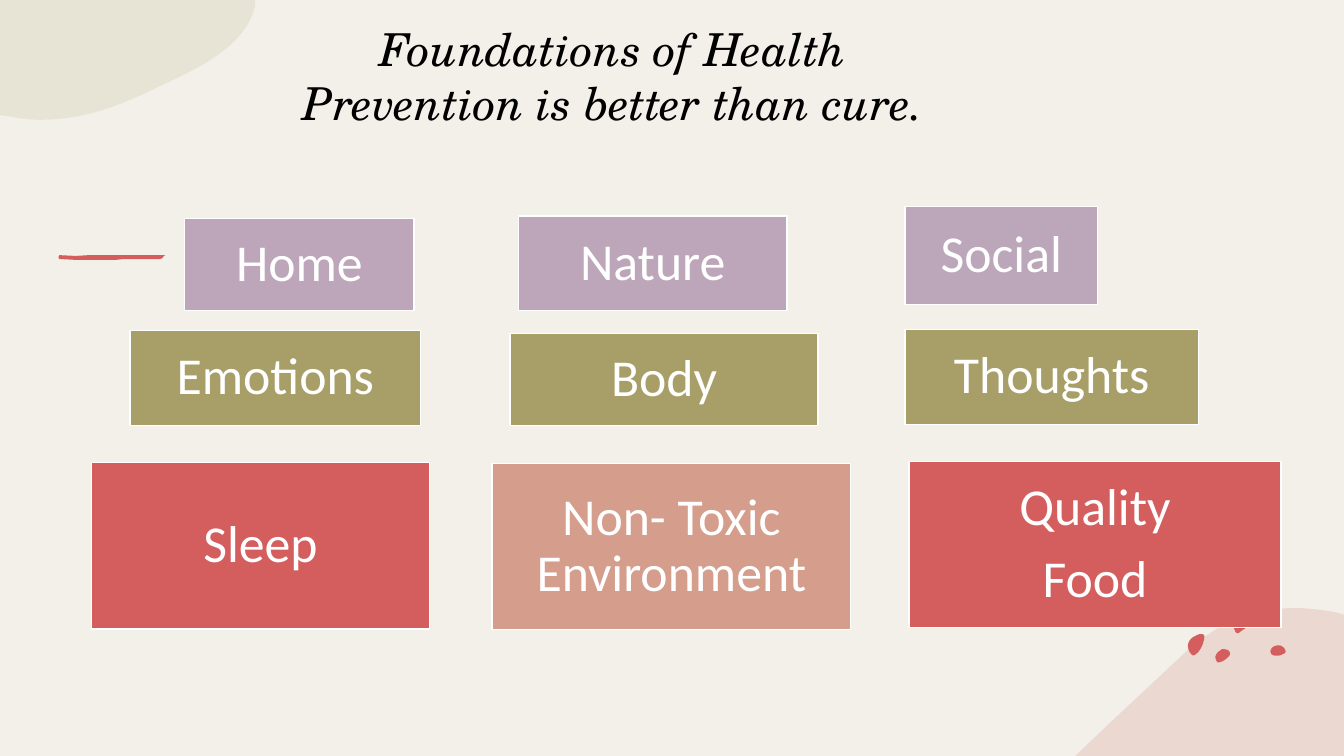
from dataclasses import dataclass

from lxml.etree import SubElement
from pptx import Presentation
from pptx.dml.color import RGBColor
from pptx.enum.shapes import MSO_SHAPE
from pptx.enum.text import MSO_ANCHOR, PP_ALIGN
from pptx.oxml.ns import qn
from pptx.shapes.autoshape import Shape
from pptx.slide import Slide
from pptx.text.text import TextFrame
from pptx.util import Cm, Pt

CREAM = RGBColor(0xF3, 0xF0, 0xE9)
SAND = RGBColor(0xDC, 0xD9, 0xC3)
BLUSH = RGBColor(0xE5, 0xC4, 0xBA)
CORAL = RGBColor(0xD4, 0x5E, 0x5E)
SALMON = RGBColor(0xD4, 0x9D, 0x8C)
OLIVE = RGBColor(0xA8, 0x9F, 0x68)
MAUVE = RGBColor(0xBD, 0xA6, 0xB9)
SOFT_MAUVE = RGBColor(0xBC, 0xA6, 0xB9)
WHITE = RGBColor(0xFF, 0xFF, 0xFF)
BLACK = RGBColor(0x00, 0x00, 0x00)

TITLE_FONT = {"name": "TeX Gyre Schola", "size": Pt(32.4), "italic": True}
BOX_FONT = {"name": "Calibri", "size": Pt(37)}
TITLE_PARA = {"alignment": PP_ALIGN.CENTER}
BOX_PARA = {"alignment": PP_ALIGN.CENTER, "line_spacing": 0.9, "space_after": Pt(12)}
BOX_FRAME = {"word_wrap": True, "vertical_anchor": MSO_ANCHOR.MIDDLE} | {
    f"margin_{side}": Cm(0.38) for side in ("left", "top", "right", "bottom")
}
CURVE_STEPS = 12

Point = tuple[float, float]


@dataclass(frozen=True)
class Outline:
    """Closed outline in cm: a step of two numbers is a line, of six a Bézier curve."""

    start: Point
    steps: tuple[tuple[float, ...], ...]
    colour: RGBColor = CORAL
    opacity: int = 100


@dataclass(frozen=True)
class Box:
    text: str
    left: float
    top: float
    width: float
    height: float
    colour: RGBColor


OUTLINES = (
    # Corner blobs
    Outline((32.72, 15.32), (
        (33.05, 15.34, 33.38, 15.37, 33.71, 15.44), (33.87, 15.49),
        (33.87, 19.05), (27.1, 19.05), (27.13, 19.02),
        (27.99, 18.19, 28.88, 17.37, 29.69, 16.61),
        (30.25, 16.05, 30.8, 15.72, 31.42, 15.52),
        (31.85, 15.37, 32.28, 15.32, 32.72, 15.32),
    ), BLUSH, 50),
    Outline((0, 0), (
        (6.43, 0), (6.43, 0.15),
        (6.22, 1.12, 5.08, 1.7, 4.01, 2.18),
        (3.12, 2.62, 2.18, 3.02, 1.04, 3.02),
        (0.79, 3.02, 0.56, 3, 0.33, 2.95), (0, 2.9),
    ), SAND, 50),
    # Petals
    Outline((30.81, 16.36), (
        (30.86, 16.36, 30.89, 16.36, 30.94, 16.38),
        (30.99, 16.41, 31.01, 16.46, 30.99, 16.51),
        (30.94, 16.59, 30.78, 16.71, 30.68, 16.69),
        (30.66, 16.66, 30.63, 16.61, 30.63, 16.56),
        (30.63, 16.51, 30.68, 16.43, 30.73, 16.41),
        (30.76, 16.38, 30.78, 16.36, 30.81, 16.36),
    )),
    Outline((30.25, 15.98), (
        (30.3, 15.98, 30.35, 15.98, 30.35, 16.03), (30.35, 16.08),
        (30.33, 16.21, 30.28, 16.33, 30.2, 16.43),
        (30.15, 16.48, 30.07, 16.56, 30.02, 16.48),
        (29.95, 16.41, 29.92, 16.28, 29.95, 16.21),
        (29.97, 16.13, 30.02, 16.1, 30.07, 16.05),
        (30.1, 16.05, 30.18, 15.98, 30.25, 15.98),
    )),
    Outline((32.23, 16.26), (
        (32.28, 16.26, 32.36, 16.31, 32.38, 16.36),
        (32.41, 16.41, 32.41, 16.46, 32.33, 16.48),
        (32.26, 16.54, 32.05, 16.54, 32.03, 16.46),
        (32, 16.41, 32.03, 16.36, 32.05, 16.33),
        (32.1, 16.28, 32.16, 16.26, 32.23, 16.26),
    )),
    Outline((31.19, 15.57), (
        (31.34, 15.57, 31.62, 15.57, 31.52, 15.72),
        (31.52, 15.75, 31.5, 15.77, 31.47, 15.77), (31.24, 15.93),
        (31.22, 15.95, 31.19, 15.98, 31.14, 15.93),
        (31.09, 15.82, 31.06, 15.75, 31.06, 15.65), (31.09, 15.57),
    )),
    # Brush stroke
    Outline((1.5, 6.43), (
        (1.91, 6.45), (2.24, 6.43), (4.17, 6.43),
        (4.09, 6.45, 4.14, 6.53, 3.99, 6.53),
        (3.1, 6.53), (2.92, 6.55), (1.91, 6.55), (1.55, 6.53),
        (1.45, 6.55, 1.47, 6.45, 1.5, 6.43),
    )),
)

BOXES = (
    Box("Home", 4.65, 5.51, 5.79, 2.31, MAUVE),
    Box("Emotions", 3.28, 8.33, 7.32, 2.39, OLIVE),
    Box("Nature", 13.06, 5.44, 6.78, 2.39, MAUVE),
    Box("Quality\nFood", 22.91, 11.63, 9.37, 4.19, CORAL),
    Box("Social", 22.81, 5.21, 4.85, 2.46, SOFT_MAUVE),
    Box("Non- Toxic Environment", 12.4, 11.68, 9.04, 4.19, SALMON),
    Box("Body", 12.85, 8.41, 7.77, 2.31, OLIVE),
    Box("Sleep", 2.31, 11.66, 8.51, 4.19, CORAL),
    Box("Thoughts", 22.81, 8.31, 7.39, 2.39, OLIVE),
)


def apply_format(target: object, values: dict) -> None:
    for name, value in values.items():
        setattr(target, name, value)


def curve_points(start: Point, step: tuple[float, ...]) -> list[Point]:
    """Points along one cubic Bézier curve, without its start."""
    corners = (start, step[0:2], step[2:4], step[4:6])
    points = []
    for index in range(1, CURVE_STEPS + 1):
        t = index / CURVE_STEPS
        weights = ((1 - t) ** 3, 3 * t * (1 - t) ** 2, 3 * t**2 * (1 - t), t**3)
        x, y = (sum(w * c[axis] for w, c in zip(weights, corners)) for axis in (0, 1))
        points.append((x, y))
    return points


def paint(shape: Shape, colour: RGBColor) -> None:
    shape.shadow.inherit = False
    shape.fill.solid()
    shape.fill.fore_color.rgb = colour


def draw_outline(page: Slide, outline: Outline) -> None:
    points = [outline.start]
    for step in outline.steps:
        points += [step] if len(step) == 2 else curve_points(points[-1], step)
    first, *others = [(Cm(x), Cm(y)) for x, y in points]
    builder = page.shapes.build_freeform(*first)
    builder.add_line_segments(others, close=True)
    shape = builder.convert_to_shape()
    paint(shape, outline.colour)
    shape.line.fill.background()
    if outline.opacity < 100:
        colour = shape.fill._xPr.find(qn("a:solidFill"))[0]
        SubElement(colour, qn("a:alpha"), val=str(outline.opacity * 1000))


def write_text(frame: TextFrame, text: str, para_format: dict, font: dict, colour: RGBColor) -> None:
    frame.text = text
    for para in frame.paragraphs:
        apply_format(para, para_format)
        for span in para.runs:
            apply_format(span.font, font)
            span.font.color.rgb = colour


def draw_box(page: Slide, box: Box) -> None:
    bounds = map(Cm, (box.left, box.top, box.width, box.height))
    shape = page.shapes.add_shape(MSO_SHAPE.RECTANGLE, *bounds)
    paint(shape, box.colour)
    shape.line.color.rgb = WHITE
    shape.line.width = Pt(1)
    apply_format(shape.text_frame, BOX_FRAME)
    write_text(shape.text_frame, box.text, BOX_PARA, BOX_FONT, WHITE)


def draw_title(page: Slide) -> None:
    frame = page.shapes.add_textbox(Cm(1.45), Cm(0.71), Cm(27.99), Cm(2.69)).text_frame
    apply_format(frame, {"word_wrap": True, "vertical_anchor": MSO_ANCHOR.BOTTOM})
    text = "Foundations of Health\vPrevention is better than cure."
    write_text(frame, text, TITLE_PARA, TITLE_FONT, BLACK)


def main() -> None:
    deck = Presentation()
    deck.slide_width, deck.slide_height = Cm(33.87), Cm(19.05)
    page = deck.slides.add_slide(deck.slide_layouts[6])
    page.background.fill.solid()
    page.background.fill.fore_color.rgb = CREAM
    for outline in OUTLINES:
        draw_outline(page, outline)
    draw_title(page)
    for box in BOXES:
        draw_box(page, box)
    deck.save("out.pptx")


if __name__ == "__main__":
    main()
